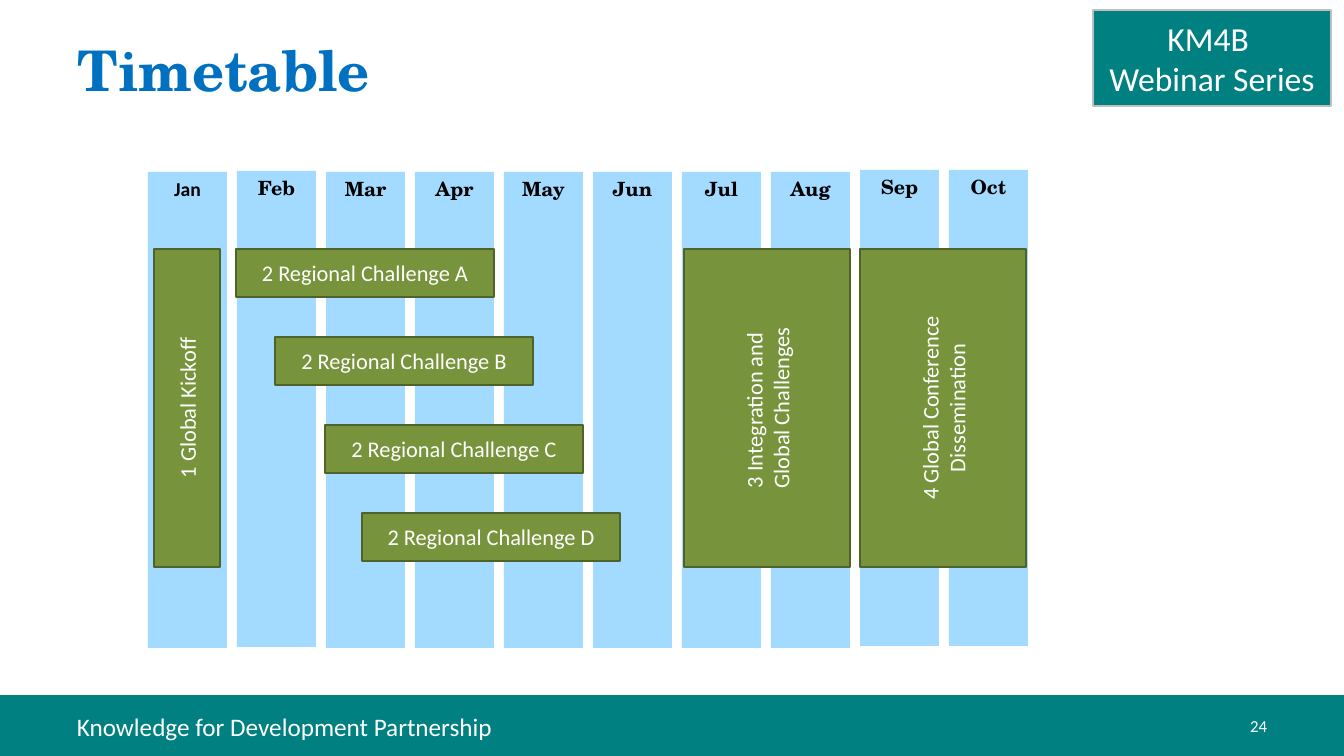
"""Build the Timetable slide: ten month columns with project phases on top."""
from pptx import Presentation
from pptx.dml.color import RGBColor
from pptx.enum.shapes import MSO_SHAPE
from pptx.enum.text import MSO_ANCHOR, PP_ALIGN
from pptx.util import Pt

RECT = MSO_SHAPE.RECTANGLE
TOP, MIDDLE = MSO_ANCHOR.TOP, MSO_ANCHOR.MIDDLE
LEFT, CENTER, RIGHT = PP_ALIGN.LEFT, PP_ALIGN.CENTER, PP_ALIGN.RIGHT
SCALE = 914400 / 100.8
SANS, SERIF = "Calibri", "TeX Gyre Schola"
HUES = {"teal": "008080", "gray": "BFBFBF", "blue": "0070C0", "sky": "A3DAFF",
        "green": "77933C", "moss": "4F6228", "white": "FFFFFF", "black": "000000"}

TITLE = "Timetable"
SERIES = "KM4B \vWebinar Series"
FOOTER = "Knowledge for Development Partnership"
NUMBER = "24"
MONTHS = [("Jan", 172), ("Feb", 171), ("Mar", 172), ("Apr", 172), ("May", 172),
          ("Jun", 172), ("Jul", 172), ("Aug", 172), ("Sep", 170), ("Oct", 170)]
REGIONS = [("A", 236), ("B", 275), ("C", 325), ("D", 362)]
PHASES = [("1 Global Kickoff", 154, 66),
          ("3 Integration and \vGlobal Challenges", 684, 166),
          ("4 Global Conference Dissemination", 860, 166)]

COL_X, COL_STEP, COL_W, COL_H = 148, 89, 79, 476
ROW_Y, ROW_STEP, ROW_W, ROW_H = 249, 88, 258, 48
PHASE_H = 318


def px(n):
    return round(n * SCALE)


def hue(name):
    return RGBColor.from_string(HUES[name])


def place(shape, x, y, w, h):
    shape.left, shape.top, shape.width, shape.height = map(px, (x, y, w, h))


def write(shape, text, size, color="white", font=SANS, bold=False,
          align=CENTER, anchor=MIDDLE):
    frame = shape.text_frame
    frame.word_wrap = True
    frame.vertical_anchor = anchor
    frame.text = text
    para = frame.paragraphs[0]
    para.alignment = align
    para.font.size, para.font.name, para.font.bold = Pt(size), font, bold
    para.font.color.rgb = hue(color)


def box(slide, x, y, w, h, fill, line=None):
    shape = slide.shapes.add_shape(RECT, px(x), px(y), px(w), px(h))
    shape.shadow.inherit = False
    shape.fill.solid()
    shape.fill.fore_color.rgb = hue(fill)
    if line:
        shape.line.color.rgb = hue(line)
        shape.line.width = Pt(2)
    else:
        shape.line.fill.background()
    return shape


def label(slide, x, y, w, h, text, size, **style):
    shape = slide.shapes.add_textbox(px(x), px(y), px(w), px(h))
    write(shape, text, size, **style)


def frame_parts(slide):
    box(slide, 0, 695, 1344, 61, "teal")
    write(box(slide, 1093, 10, 238, 96, "teal", "gray"), SERIES, 24)
    title = slide.shapes.title
    place(title, 67, 30, 1017, 126)
    write(title, TITLE, 40, "blue", SERIF, True, LEFT, TOP)
    label(slide, 67, 706, 869, 40, FOOTER, 18, align=LEFT, anchor=TOP)
    label(slide, 964, 706, 313, 40, NUMBER, 12, align=RIGHT)


def chart_parts(slide):
    for i, (month, y) in enumerate(MONTHS):
        col = box(slide, COL_X + i * COL_STEP, y, COL_W, COL_H, "sky")
        write(col, month, 14, "black", SERIF if i else SANS, True, anchor=TOP)
    for i, (name, x) in enumerate(REGIONS):
        bar = box(slide, x, ROW_Y + i * ROW_STEP, ROW_W, ROW_H, "green", "moss")
        write(bar, f"2 Regional Challenge {name}", 16)
    for text, x, w in PHASES:
        shift = (PHASE_H - w) / 2
        bar = box(slide, x - shift, ROW_Y + shift, PHASE_H, w, "green", "moss")
        bar.rotation = 270
        write(bar, text, 16)


def main():
    deck = Presentation()
    deck.slide_width, deck.slide_height = px(1344), px(756)
    slide = deck.slides.add_slide(deck.slide_layouts[5])
    frame_parts(slide)
    chart_parts(slide)
    deck.save("out.pptx")


if __name__ == "__main__":
    main()
